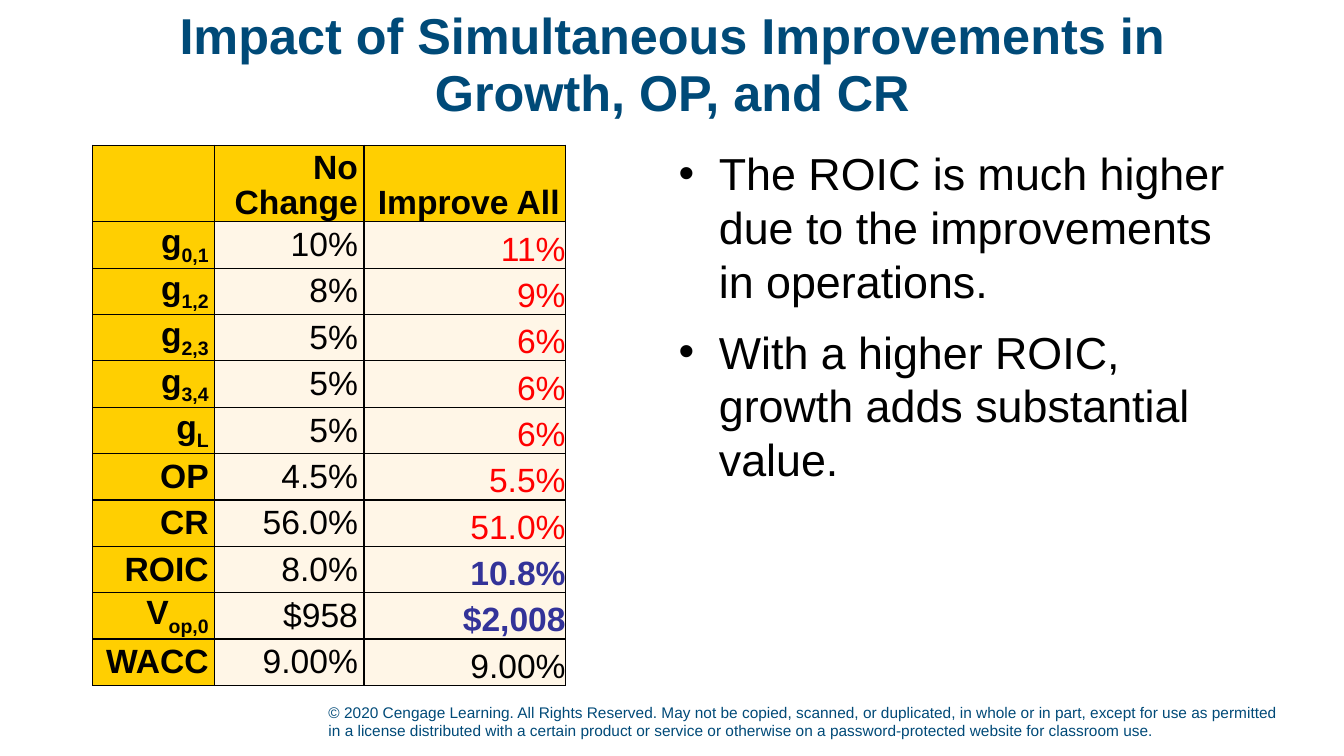
from dataclasses import dataclass

from lxml.etree import SubElement
from pptx import Presentation
from pptx.dml.color import RGBColor
from pptx.enum.text import MSO_ANCHOR, MSO_AUTO_SIZE, PP_ALIGN
from pptx.oxml.ns import qn
from pptx.util import Inches, Pt


@dataclass(frozen=True)
class Theme:
    """Colours, font and type sizes of the slide."""
    font: str = "Arial"
    navy: str = "004A78"
    black: str = "000000"
    red: str = "FF0000"
    indigo: str = "333399"
    gold: str = "FFCF01"
    cream: str = "FFF6E7"
    title_size: int = 36
    body_size: int = 32
    table_size: int = 24
    notice_size: int = 11


THEME = Theme()

TITLE = "Impact of Simultaneous Improvements in Growth, OP, and CR"
TAKEAWAYS = [
    "The ROIC is much higher due to the improvements in operations.",
    "With a higher ROIC, growth adds substantial value.",
]
COPYRIGHT = (
    "© 2020 Cengage Learning. All Rights Reserved. May not be copied, scanned, or "
    "duplicated, in whole or in part, except for use as permitted in a license "
    "distributed with a certain product or service or otherwise on a "
    "password-protected website for classroom use."
)
HEADINGS = ["", "No Change", "Improve All"]
MEASURES = [
    ("g", "0,1", "10%", "11%", THEME.red),
    ("g", "1,2", "8%", "9%", THEME.red),
    ("g", "2,3", "5%", "6%", THEME.red),
    ("g", "3,4", "5%", "6%", THEME.red),
    ("g", "L", "5%", "6%", THEME.red),
    ("OP", "", "4.5%", "5.5%", THEME.red),
    ("CR", "", "56.0%", "51.0%", THEME.red),
    ("ROIC", "", "8.0%", "10.8%", THEME.indigo),
    ("V", "op,0", "$958", "$2,008", THEME.indigo),
    ("WACC", "", "9.00%", "9.00%", THEME.black),
]
COLUMN_WIDTHS = [1.21, 1.48, 2]
HEADER_HEIGHT = 0.75
ROW_HEIGHT = 0.46


def set_font(paragraph, size, color, bold=False):
    """Give a whole paragraph its type."""
    font = paragraph.font
    font.name = THEME.font
    font.size = Pt(size)
    font.bold = bold
    font.color.rgb = RGBColor.from_string(color)


def place(part, left, top, width, height):
    """Move a part to a box given in inches."""
    part.left, part.top = Inches(left), Inches(top)
    part.width, part.height = Inches(width), Inches(height)


def add_title(slide, box):
    """Fill the title placeholder."""
    heading = slide.shapes.title
    place(heading, *box)
    frame = heading.text_frame
    frame.text = TITLE
    frame.auto_size = MSO_AUTO_SIZE.NONE
    frame.vertical_anchor = MSO_ANCHOR.MIDDLE
    paragraph = frame.paragraphs[0]
    paragraph.alignment = PP_ALIGN.CENTER
    paragraph.line_spacing = 0.95
    set_font(paragraph, THEME.title_size, THEME.navy, bold=True)


def add_takeaways(slide, box):
    """Fill the body placeholder with the bulleted takeaways."""
    body = slide.placeholders[1]
    place(body, *box)
    frame = body.text_frame
    frame.text = "\n".join(TAKEAWAYS)
    frame.auto_size = MSO_AUTO_SIZE.NONE
    for index, paragraph in enumerate(frame.paragraphs):
        paragraph.space_before = Pt(6 if index else 0)
        paragraph.space_after = Pt(6)
        properties = paragraph._p.get_or_add_pPr()
        properties.set("marL", str(Inches(0.4)))
        properties.set("indent", str(Inches(-0.4)))
        SubElement(properties, qn("a:buChar"), char="•")
        set_font(paragraph, THEME.body_size, THEME.black)


def style_cell(cell, fill, anchor, inset=0.06):
    """Set a cell's borders, fill, margins and anchor."""
    properties = cell._tc.get_or_add_tcPr()
    for side in ("a:lnL", "a:lnR", "a:lnT", "a:lnB"):
        line = SubElement(properties, qn(side), w=str(Pt(1)))
        SubElement(SubElement(line, qn("a:solidFill")), qn("a:srgbClr"), val=THEME.black)
    cell.fill.solid()
    cell.fill.fore_color.rgb = RGBColor.from_string(fill)
    cell.margin_left = cell.margin_right = Inches(inset)
    cell.margin_top = cell.margin_bottom = 0
    cell.vertical_anchor = anchor


def write_cell(cell, text, color=THEME.black, bold=False, subscript=""):
    """Write right-aligned text with an optional subscript."""
    paragraph = cell.text_frame.paragraphs[0]
    paragraph.alignment = PP_ALIGN.RIGHT
    set_font(paragraph, THEME.table_size, color, bold)
    if text:
        paragraph.add_run().text = text
    if subscript:
        index = paragraph.add_run()
        index.text = subscript
        index._r.get_or_add_rPr().set("baseline", "-25000")


def add_comparison(slide, box):
    """Build the table comparing no change with all improvements."""
    table = slide.shapes.add_table(
        len(MEASURES) + 1, len(HEADINGS), *map(Inches, box)
    ).table
    table.first_row = table.horz_banding = False
    for column, width in zip(table.columns, COLUMN_WIDTHS):
        column.width = Inches(width)
    for index, row in enumerate(table.rows):
        row.height = Inches(ROW_HEIGHT if index else HEADER_HEIGHT)
    for index, heading in enumerate(HEADINGS):
        cell = table.cell(0, index)
        style_cell(cell, THEME.gold, MSO_ANCHOR.BOTTOM)
        write_cell(cell, heading, bold=True)
        cell.text_frame.paragraphs[0].line_spacing = 0.95
    for index, (measure, subscript, before, after, color) in enumerate(MEASURES, 1):
        label, unchanged, improved = (table.cell(index, column) for column in range(3))
        style_cell(label, THEME.gold, MSO_ANCHOR.MIDDLE)
        write_cell(label, measure, bold=True, subscript=subscript)
        style_cell(unchanged, THEME.cream, MSO_ANCHOR.MIDDLE)
        write_cell(unchanged, before)
        style_cell(improved, THEME.cream, MSO_ANCHOR.BOTTOM, inset=0)
        write_cell(improved, after, color, bold=color == THEME.indigo)


def add_copyright(slide, box):
    """Add the copyright line at the foot."""
    frame = slide.shapes.add_textbox(*map(Inches, box)).text_frame
    frame.word_wrap = True
    frame.vertical_anchor = MSO_ANCHOR.BOTTOM
    frame.text = COPYRIGHT
    set_font(frame.paragraphs[0], THEME.notice_size, THEME.navy)


def main():
    """Build and save the slide."""
    deck = Presentation()
    deck.slide_width, deck.slide_height = Inches(13.33), Inches(7.5)
    slide = deck.slides.add_slide(deck.slide_layouts[1])
    add_copyright(slide, (3.16, 6.89, 9.63, 0.5))
    add_title(slide, (0.92, 0.15, 11.5, 1))
    add_comparison(slide, (0.92, 1.44, sum(COLUMN_WIDTHS), 5.36))
    add_takeaways(slide, (6.63, 1.4, 5.78, 5.36))
    deck.save("out.pptx")


if __name__ == "__main__":
    main()
